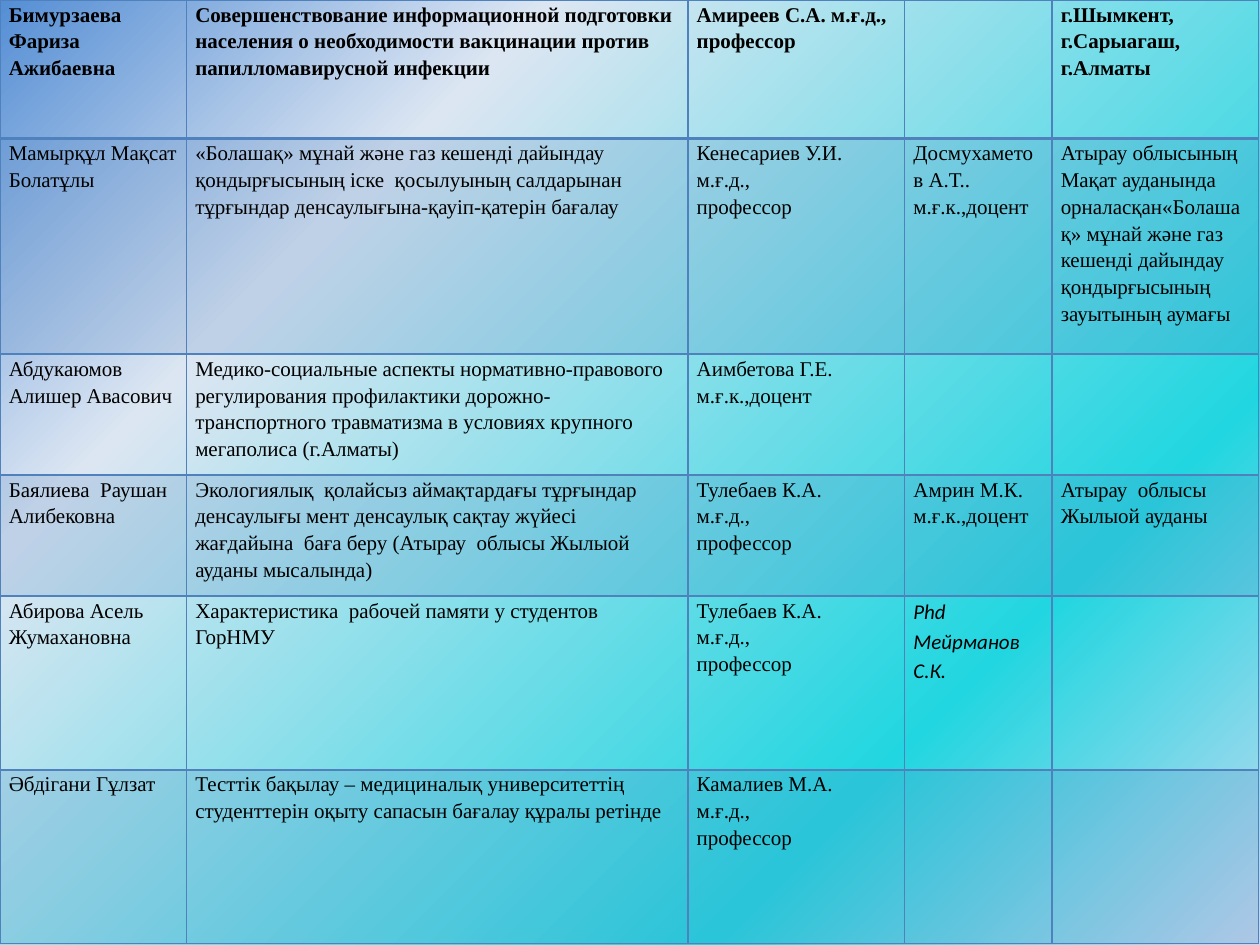
from dataclasses import dataclass

from pptx import Presentation
from pptx.dml.color import RGBColor as RGB
from pptx.oxml import parse_xml
from pptx.oxml.ns import nsdecls
from pptx.util import Inches, Pt


@dataclass(frozen=True)
class Theme:
    ink: str = "000000"
    blue: str = "4F81BD"
    tint: int = 20
    stops: tuple = ((0, "C6D9F1"), (25, "21D6E0"), (75, "DCE6F2"), (100, "558ED5"))
    font: str = "Times New Roman"
    accent: str = "Calibri"
    size: float = 12
    lead: float = 1.15
    pad: float = 0.07
    thin: float = 1
    thick: float = 2


@dataclass(frozen=True)
class Row:
    height: float
    name: str
    topic: str
    guide: str
    second: str = ""
    place: str = ""
    bold: bool = False
    band: bool = False
    slant: bool = False  # second adviser in the accent font


THEME = Theme()
WIDTHS = (1.48, 3.98, 1.72, 1.17, 1.64)
TULEBAEV = "Тулебаев К.А.\nм.ғ.д.,\nпрофессор"
ROWS = (
    Row(1.1, "Бимурзаева Фариза Ажибаевна",
        "Совершенствование информационной подготовки населения о необходимости "
        "вакцинации против папилломавирусной инфекции",
        "Амиреев С.А. м.ғ.д.,\nпрофессор",
        place="г.Шымкент,\nг.Сарыагаш,\nг.Алматы", bold=True),
    Row(1.71, "Мамырқұл Мақсат Болатұлы",
        "«Болашақ» мұнай және газ кешенді дайындау қондырғысының іске  қосылуының "
        "салдарынан тұрғындар денсаулығына-қауіп-қатерін бағалау",
        "Кенесариев У.И. м.ғ.д.,\nпрофессор",
        "Досмухаметов А.Т..\nм.ғ.к.,доцент",
        "Атырау облысының Мақат ауданында орналасқан«Болашақ» мұнай және газ "
        "кешенді дайындау қондырғысының зауытының аумағы", band=True),
    Row(0.96, "Абдукаюмов  Алишер Авасович",
        "Медико-социальные аспекты нормативно-правового регулирования профилактики "
        "дорожно-транспортного травматизма в условиях крупного мегаполиса (г.Алматы)",
        "Аимбетова Г.Е. м.ғ.к.,доцент"),
    Row(0.96, "Баялиева  Раушан Алибековна",
        "Экологиялық  қолайсыз аймақтардағы тұрғындар денсаулығы мент денсаулық "
        "сақтау жүйесі жағдайына  баға беру (Атырау  облысы Жылыой ауданы мысалында)",
        TULEBAEV, "Амрин М.К.\nм.ғ.к.,доцент",
        "Атырау  облысы Жылыой ауданы", band=True),
    Row(1.38, "Абирова Асель Жумахановна",
        "Характеристика  рабочей памяти у студентов ГорНМУ",
        TULEBAEV, "Phd   Мейрманов С.К.", slant=True),
    Row(1.38, "Әбдігани Гұлзат",
        "Тесттік бақылау – медициналық университеттің студенттерін оқыту сапасын "
        "бағалау құралы ретінде",
        "Камалиев М.А.\nм.ғ.д.,\nпрофессор", band=True),
)


def paint_back(slide) -> None:
    """Radial gradient centred on the lower right corner."""
    stops = "".join(
        f'<a:gs pos="{pos * 1000}"><a:srgbClr val="{color}"/></a:gs>'
        for pos, color in THEME.stops)
    slide.element.cSld.insert(0, parse_xml(
        f'<p:bg {nsdecls("p", "a")}><p:bgPr><a:gradFill rotWithShape="1">'
        f'<a:gsLst>{stops}</a:gsLst><a:path path="circle">'
        '<a:fillToRect l="100000" t="100000"/></a:path></a:gradFill>'
        '<a:effectLst/></p:bgPr></p:bg>'))


def fill_cell(cell, band: bool) -> None:
    if not band:
        cell.fill.background()
        return
    cell.fill.solid()
    cell.fill.fore_color.rgb = RGB.from_string(THEME.blue)
    color = cell._tc.tcPr.find(".//{*}srgbClr")
    color.append(parse_xml(f'<a:alpha {nsdecls("a")} val="{THEME.tint * 1000}"/>'))


def edge_cell(cell, top: float, bottom: float) -> None:
    """Borders come before the fill in the cell properties."""
    sides = {"L": THEME.thin, "R": THEME.thin, "T": top, "B": bottom}
    for spot, (side, width) in enumerate(sides.items()):
        cell._tc.get_or_add_tcPr().insert(spot, parse_xml(
            f'<a:ln{side} {nsdecls("a")} w="{Pt(width)}"><a:solidFill>'
            f'<a:srgbClr val="{THEME.blue}"/></a:solidFill></a:ln{side}>'))


def write_cell(cell, text: str, bold: bool, slant: bool) -> None:
    cell.margin_left = cell.margin_right = Inches(THEME.pad)
    cell.margin_top = cell.margin_bottom = 0
    cell.text_frame.text = text
    for para in cell.text_frame.paragraphs:
        para.line_spacing = THEME.lead
        para.font.size = Pt(THEME.size)
        for run in para.runs:
            font = run.font
            font.name = THEME.accent if slant else THEME.font
            font.size = Pt(THEME.size)
            font.bold, font.italic = bold, slant
            font.color.rgb = RGB.from_string(THEME.ink)


def draw_table(slide) -> None:
    table = slide.shapes.add_table(
        len(ROWS), len(WIDTHS), 0, 0, Inches(10), Inches(7.5)).table
    table.first_row = table.horz_banding = False
    for col, width in zip(table.columns, WIDTHS):
        col.width = Inches(width)
    for i, row in enumerate(ROWS):
        table.rows[i].height = Inches(row.height)
        texts = (row.name, row.topic, row.guide, row.second, row.place)
        # A heavier rule parts the first row from the rest
        top = THEME.thick if i == 1 else THEME.thin
        bottom = THEME.thick if i == 0 else THEME.thin
        for j, text in enumerate(texts):
            cell = table.cell(i, j)
            write_cell(cell, text, row.bold, row.slant and j == 3)
            fill_cell(cell, row.band)
            edge_cell(cell, top, bottom)
    table.cell(0, 0).text_frame.paragraphs[0].space_after = Pt(10)


def main() -> None:
    deck = Presentation()
    deck.slide_width, deck.slide_height = Inches(10), Inches(7.5)
    slide = deck.slides.add_slide(deck.slide_layouts[6])
    paint_back(slide)
    draw_table(slide)
    deck.save("out.pptx")


if __name__ == "__main__":
    main()
